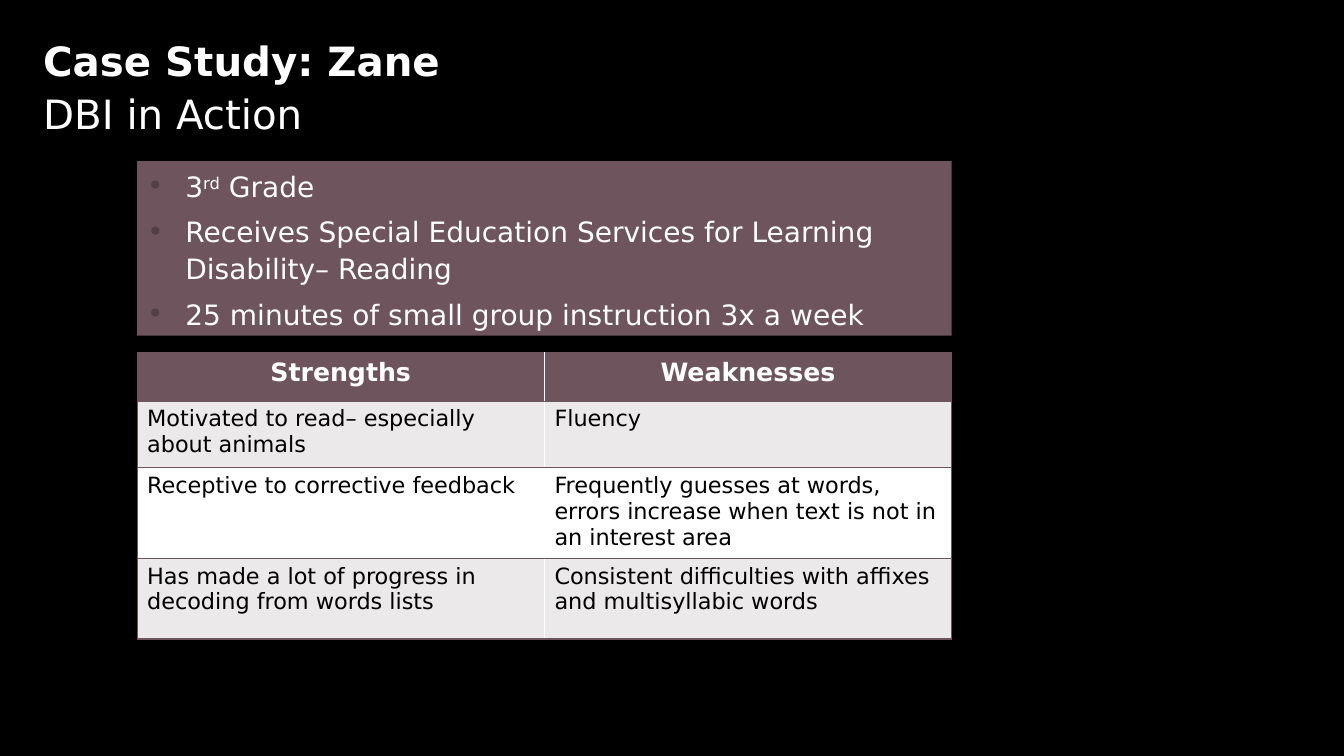
from dataclasses import dataclass

from lxml import etree
from pptx import Presentation
from pptx.dml.color import RGBColor
from pptx.enum.shapes import MSO_SHAPE
from pptx.enum.text import MSO_ANCHOR, PP_ALIGN
from pptx.oxml.ns import qn
from pptx.util import Inches, Pt

RECTANGLE = MSO_SHAPE.RECTANGLE
TOP, MIDDLE = MSO_ANCHOR.TOP, MSO_ANCHOR.MIDDLE
LEFT, CENTER = PP_ALIGN.LEFT, PP_ALIGN.CENTER

# Content
HEADING = "Case Study: Zane"
SUBHEADING = "DBI in Action"
# Each fact is a list of (text, is superscript)
FACTS = [
    [("3", False), ("rd", True), (" Grade", False)],
    [("Receives Special Education Services for Learning Disability– Reading", False)],
    [("25 minutes of small group instruction 3x a week", False)],
]
PROFILE = [
    ("Strengths", "Weaknesses"),
    ("Motivated to read– especially about animals", "Fluency"),
    ("Receptive to corrective feedback",
     "Frequently guesses at words, errors increase when text is not in an interest area"),
    ("Has made a lot of progress in decoding from words lists",
     "Consistent difficulties with affixes and multisyllabic words"),
]


@dataclass(frozen=True)
class Theme:
    font: str = "DejaVu Sans"
    background: str = "000000"
    light: str = "FFFFFF"
    dark: str = "000000"
    accent: str = "6D545D"
    bullet: str = "523F46"
    band: str = "EBE9EA"
    title_size: float = 28.8
    fact_size: float = 20
    header_size: float = 18
    cell_size: float = 16
    line_spacing: float = 1.1


THEME = Theme()

# Layout in inches
SLIDE_W, SLIDE_H = 13.33, 7.5
TITLE_BOX = (0.33, 0.25, SLIDE_W - 2 * 0.33, 1.18)
CONTENT_LEFT, CONTENT_W = 1.36, 8.08
FACTS_TOP, FACTS_H = 1.6, 1.73
PROFILE_TOP = 3.5
ROW_HEIGHTS = (0.48, 0.66, 0.87, 0.8)
HANGING = 0.38


def color(value):
    return RGBColor.from_string(value)


def add_run(paragraph, text, size, ink, bold=False):
    run = paragraph.add_run()
    run.text = text
    run.font.name = THEME.font
    run.font.size = Pt(size)
    run.font.bold = bold
    run.font.color.rgb = color(ink)
    return run


def add_bullet(paragraph):
    props = paragraph._p.get_or_add_pPr()
    props.set("marL", str(Inches(HANGING)))
    props.set("indent", str(-Inches(HANGING)))
    tint = etree.SubElement(props, qn("a:buClr"))
    etree.SubElement(tint, qn("a:srgbClr"), val=THEME.bullet)
    etree.SubElement(props, qn("a:buFont"), typeface=THEME.font)
    etree.SubElement(props, qn("a:buChar"), char="•")


def add_borders(cell, sides):
    props = cell._tc.get_or_add_tcPr()
    for position, side in enumerate(sides):
        border = etree.Element(qn(f"a:ln{side}"), w=str(Pt(1)))
        fill = etree.SubElement(border, qn("a:solidFill"))
        etree.SubElement(fill, qn("a:srgbClr"), val=THEME.accent)
        props.insert(position, border)


prs = Presentation()
prs.slide_width, prs.slide_height = Inches(SLIDE_W), Inches(SLIDE_H)
slide = prs.slides.add_slide(prs.slide_layouts[6])
slide.background.fill.solid()
slide.background.fill.fore_color.rgb = color(THEME.background)

# Title
title = slide.shapes.add_textbox(*map(Inches, TITLE_BOX)).text_frame
title.word_wrap = True
title.vertical_anchor = MIDDLE
title_line = title.paragraphs[0]
title_line.line_spacing = THEME.line_spacing
add_run(title_line, HEADING, THEME.title_size, THEME.light, bold=True)
title_line.add_line_break()
add_run(title_line, SUBHEADING, THEME.title_size, THEME.light)

# Facts panel
panel = slide.shapes.add_shape(
    RECTANGLE, *map(Inches, (CONTENT_LEFT, FACTS_TOP, CONTENT_W, FACTS_H)))
panel.shadow.inherit = False
panel.fill.solid()
panel.fill.fore_color.rgb = color(THEME.accent)
panel.line.fill.background()
facts = panel.text_frame
facts.word_wrap = True
facts.vertical_anchor = TOP
for index, fact in enumerate(FACTS):
    paragraph = facts.add_paragraph() if index else facts.paragraphs[0]
    add_bullet(paragraph)
    paragraph.alignment = LEFT
    paragraph.line_spacing = THEME.line_spacing
    paragraph.space_before = Pt(6 if index else 0)
    for text, superscript in fact:
        run = add_run(paragraph, text, THEME.fact_size, THEME.light)
        if superscript:
            run.font._element.set("baseline", "30000")

# Strengths and weaknesses table
column_count = len(PROFILE[0])
profile = slide.shapes.add_table(
    len(PROFILE), column_count,
    *map(Inches, (CONTENT_LEFT, PROFILE_TOP, CONTENT_W, sum(ROW_HEIGHTS)))).table
for column in profile.columns:
    column.width = Inches(CONTENT_W / column_count)
for r, (entries, height) in enumerate(zip(PROFILE, ROW_HEIGHTS)):
    profile.rows[r].height = Inches(height)
    is_header = r == 0
    row_fill = THEME.accent if is_header else (THEME.band if r % 2 else THEME.light)
    for c, entry in enumerate(entries):
        cell = profile.cell(r, c)
        cell.fill.solid()
        cell.fill.fore_color.rgb = color(row_fill)
        add_borders(cell, "LTB" if c == 0 else "RTB")
        paragraph = cell.text_frame.paragraphs[0]
        paragraph.alignment = CENTER if is_header else LEFT
        if is_header:
            add_run(paragraph, entry, THEME.header_size, THEME.light, bold=True)
        else:
            add_run(paragraph, entry, THEME.cell_size, THEME.dark)

prs.save("out.pptx")
